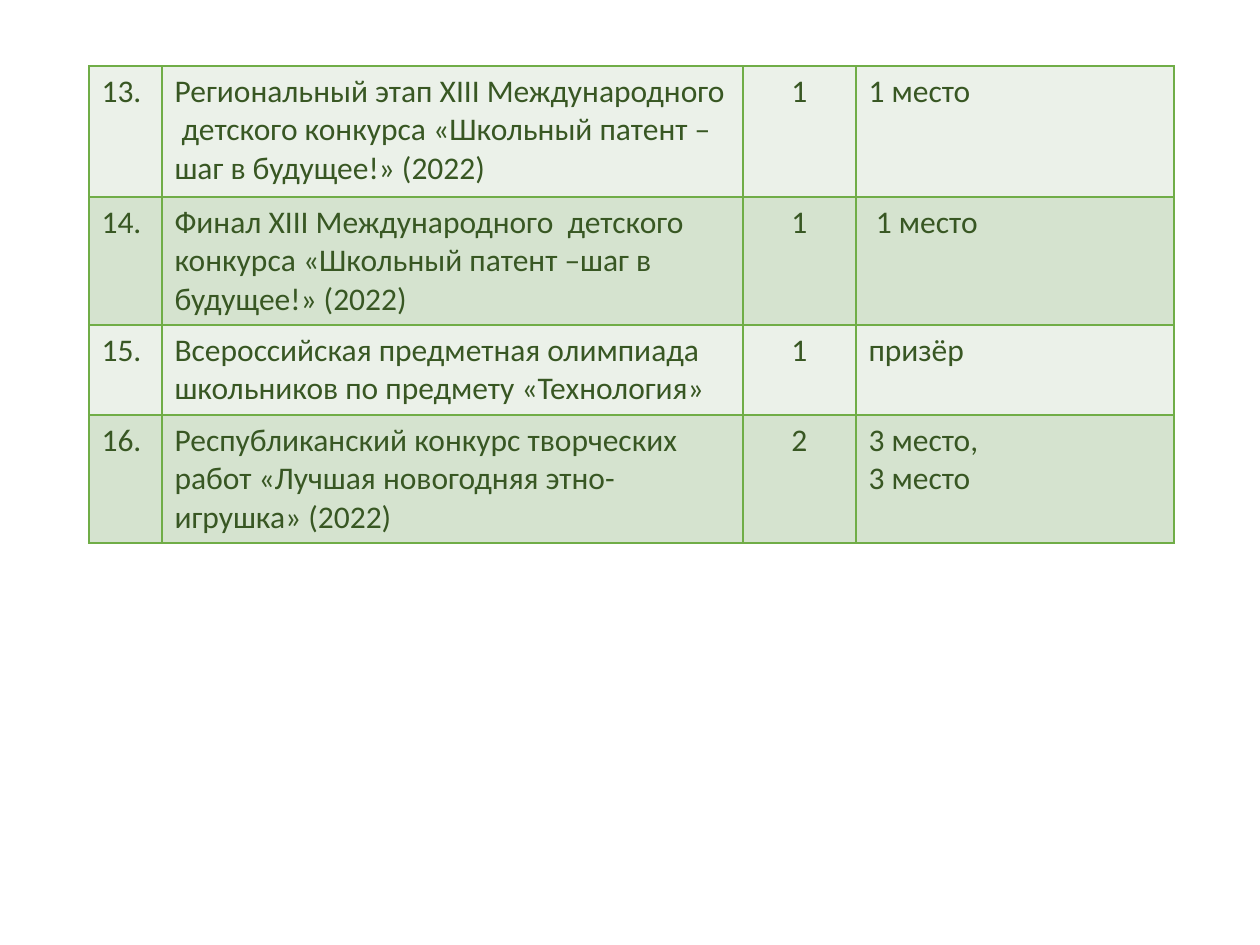
import pptx
import pptx.util
import pptx.dml.color
import pptx.enum.text
import pptx.oxml
import pptx.oxml.ns

PX = 914400 / 126
PALE = pptx.dml.color.RGBColor(0xEB, 0xF1, 0xE9)
SAGE = pptx.dml.color.RGBColor(0xD5, 0xE3, 0xCF)
GREEN = pptx.dml.color.RGBColor(0x70, 0xAD, 0x47)
DARK_GREEN = pptx.dml.color.RGBColor(0x38, 0x57, 0x23)

COL_WIDTHS = [73, 581, 113, 318]
ROW_HEIGHTS = [131, 128, 90, 128]
COUNT_COL = 2
AWARDS = [
    ("13.", "Региональный этап ХIII Международного  детского конкурса «Школьный патент –шаг в будущее!» (2022)", "1", "1 место"),
    ("14.", "Финал ХIII Международного  детского конкурса «Школьный патент –шаг в будущее!» (2022)", "1", "1 место"),
    ("15.", "Всероссийская предметная олимпиада школьников по предмету «Технология»", "1", "призёр"),
    ("16.", "Республиканский конкурс творческих работ «Лучшая новогодняя этно-игрушка» (2022)", "2", "3 место,\n3 место"),
]


def px(n):
    return pptx.util.Emu(round(n * PX))


class Deck:
    font = {"name": "Calibri", "size": pptx.util.Pt(18), "bold": False}

    def __init__(self, width, height):
        self.prs = pptx.Presentation()
        self.prs.slide_width, self.prs.slide_height = px(width), px(height)
        self.s = self.prs.slides.add_slide(self.prs.slide_layouts[6])

    def border(self, cell):
        props = cell._tc.get_or_add_tcPr()
        ns = pptx.oxml.ns.nsdecls("a")
        for i, side in enumerate(("lnL", "lnR", "lnT", "lnB")):
            props.insert(i, pptx.oxml.parse_xml(
                f'<a:{side} {ns} w="12700"><a:solidFill>'
                f'<a:srgbClr val="{GREEN}"/></a:solidFill></a:{side}>'))

    def cell(self, cell, text, fill, align):
        cell.fill.solid()
        cell.fill.fore_color.rgb = fill
        self.border(cell)
        cell.text = text
        for p in cell.text_frame.paragraphs:
            p.alignment = align
            for r in p.runs:
                for key, value in self.font.items():
                    setattr(r.font, key, value)
                r.font.color.rgb = DARK_GREEN

    def table(self, left, top, widths, heights, rows):
        table = self.s.shapes.add_table(
            len(heights), len(widths), px(left), px(top),
            px(sum(widths)), px(sum(heights))).table
        table.first_row = table.horz_banding = False
        for col, width in zip(table.columns, widths):
            col.width = px(width)
        for row, height in zip(table.rows, heights):
            row.height = px(height)
        align = pptx.enum.text.PP_ALIGN
        for i, texts in enumerate(rows):
            for j, text in enumerate(texts):
                self.cell(table.cell(i, j), text, SAGE if i % 2 else PALE,
                          align.CENTER if j == COUNT_COL else align.LEFT)
        return table


def main():
    deck = Deck(1260, 945)
    table = deck.table(89, 66, COL_WIDTHS, ROW_HEIGHTS, AWARDS)
    table.cell(1, 3).margin_left = px(20)
    deck.prs.save("out.pptx")


if __name__ == "__main__":
    main()
